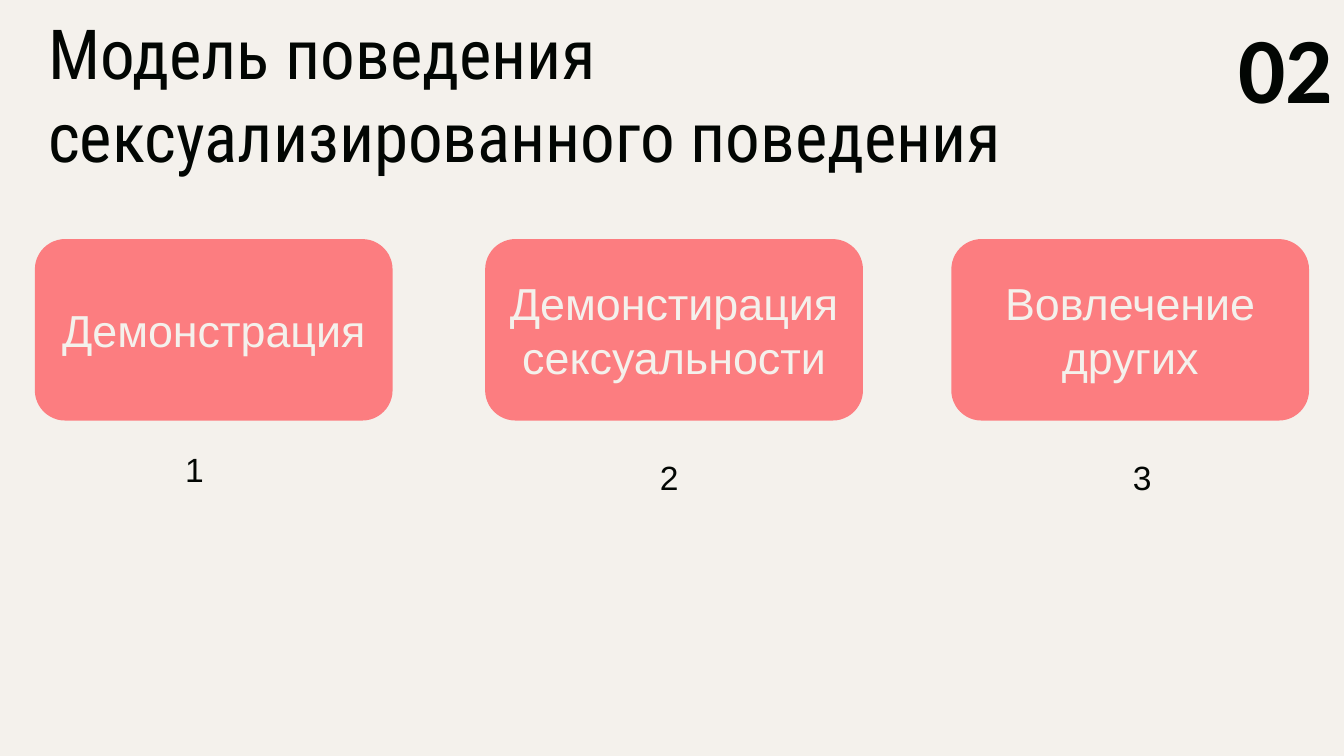
from pptx import Presentation
from pptx.dml.color import RGBColor
from pptx.enum.shapes import MSO_SHAPE as Shape
from pptx.enum.text import MSO_ANCHOR as Anchor, PP_ALIGN as Align
from pptx.util import Cm, Pt

CREAM = RGBColor(0xF4, 0xF1, 0xEC)
CORAL = RGBColor(0xFC, 0x7D, 0x80)
INK = RGBColor(0x02, 0x06, 0x03)

TITLE = dict(name="Roboto Condensed", size=Pt(37), bold=False)
SECTION = dict(name="Calibri", size=Pt(50), bold=True)
STEP = dict(name="Arial", size=Pt(24), bold=False)
NUMBER = dict(name="Arial", size=Pt(18), bold=False)

# Left and width of each card, wording, left and top of its number
STEPS = [
    (0.66, 6.76, "Демонстрация", 3.25, 8.36),
    (9.17, 7.14, "Демонстирация сексуальности", 12.22, 8.51),
    (17.98, 6.76, "Вовлечение других", 21.16, 8.51),
]
CARD_TOP, CARD_HEIGHT = 4.52, 3.43


def write(shape, text, font_format, color, align=Align.LEFT, anchor=Anchor.TOP):
    frame = shape.text_frame
    frame.word_wrap = True
    frame.vertical_anchor = anchor
    paragraph = frame.paragraphs[0]
    paragraph.alignment = align
    run = paragraph.add_run()
    run.text = text
    for attribute, value in font_format.items():
        setattr(run.font, attribute, value)
    run.font.color.rgb = color
    return frame


def add_label(slide, box, text, font_format):
    label = slide.shapes.add_textbox(*map(Cm, box))
    return write(label, text, font_format, INK)


def add_header(slide, left, top, width):
    """Section number at the right of the band, title at its left."""
    number_left = left + width - 2.24
    for box, text, font_format in [
        ((number_left, top, 6.35, 2.64), "02", SECTION),
        ((left, top, 20.5, 3.96), "Модель поведения сексуализированного поведения", TITLE),
    ]:
        add_label(slide, box, text, font_format).margin_top = Cm(0.2)


def add_card(slide, box, text):
    card = slide.shapes.add_shape(Shape.ROUNDED_RECTANGLE, *map(Cm, box))
    card.shadow.inherit = False
    card.fill.solid()
    card.fill.fore_color.rgb = CORAL
    card.line.fill.background()
    write(card, text, STEP, CREAM, Align.CENTER, Anchor.MIDDLE)


def add_steps(slide, top, height):
    for number, (left, width, text, number_left, number_top) in enumerate(STEPS, 1):
        add_card(slide, (left, top, width, height), text)
        add_label(slide, (number_left, number_top, 1.57, 1.02), str(number), NUMBER)


def main():
    deck = Presentation()
    deck.slide_width, deck.slide_height = Cm(25.4), Cm(14.29)
    slide = deck.slides.add_slide(deck.slide_layouts[6])
    slide.background.fill.solid()
    slide.background.fill.fore_color.rgb = CREAM
    add_header(slide, 0.66, 0, 24.74)
    add_steps(slide, CARD_TOP, CARD_HEIGHT)
    deck.save("out.pptx")


if __name__ == "__main__":
    main()
